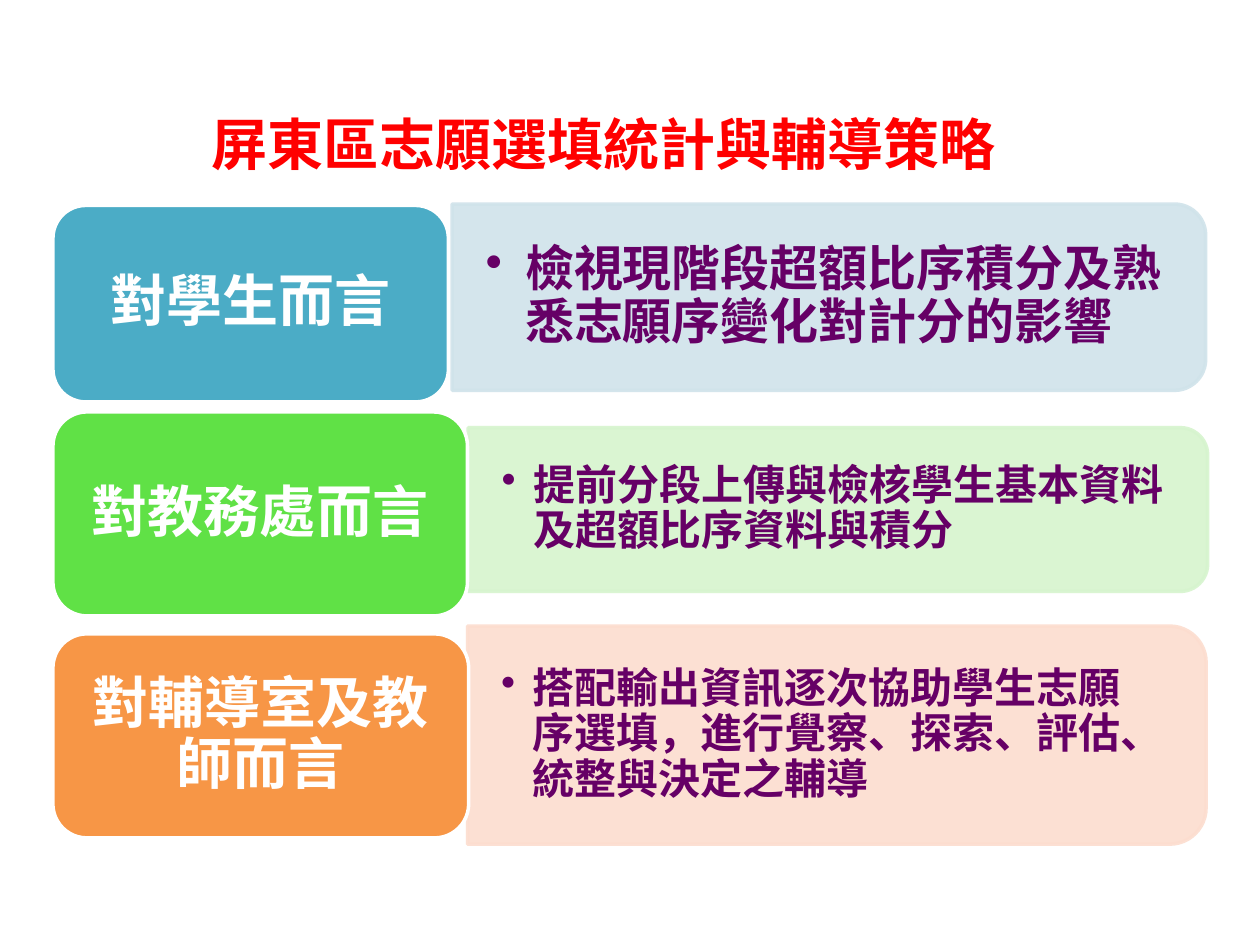
from dataclasses import dataclass

from lxml.etree import SubElement
from pptx import Presentation
from pptx.dml.color import RGBColor
from pptx.enum.shapes import MSO_SHAPE as Shape
from pptx.enum.text import MSO_ANCHOR as Anchor, PP_ALIGN as Align
from pptx.oxml.ns import qn
from pptx.util import Pt


@dataclass(frozen=True)
class Theme:
    font: str = "Noto Sans CJK SC"
    title: str = "FF0000"
    label: str = "FFFFFF"
    body: str = "660066"
    heading_size: int = 32
    line_width: int = 2
    line_spacing: float = 0.9
    panel_alpha: int = 90000


THEME = Theme()
TITLE = "屏東區志願選填統計與輔導策略"
TITLE_BOX = (113.8, 63.4, 517.7, 82.8)
CARD_LEFT = 30.24
CORNER_INSET = 0.0488
LABEL_MARGINS = (9.4, 5)
BODY_MARGINS = (19.2, 10)

# card and panel hold their own geometry because the rows differ slightly
ROWS = [
    dict(label="對學生而言", body="檢視現階段超額比序積分及熟悉志願序變化對計分的影響",
         size=28, indent=22.5, card_fill="4BACC6", panel_fill="D0E3EA",
         card=(117.4, 226, 112.3), panel=(258.4, 116.6, 430.56, 106.5)),
    dict(label="對教務處而言", body="提前分段上傳與檢核學生基本資料及超額比序資料與積分",
         size=24, indent=18, card_fill="60E146", panel_fill="D6F4CE",
         card=(235.4, 236.9, 116.6), panel=(267.5, 244.4, 422.6, 93.6)),
    dict(label="對輔導室及教師而言",
         body="搭配輸出資訊逐次協助學生志願序選填，進行覺察、探索、評估、統整與決定之輔導",
         size=24, indent=18, card_fill="F79646", panel_fill="FCDDCF",
         card=(362.2, 237.6, 116.6), panel=(267.2, 357.8, 422, 124.6)),
]


def write(shape, text, size, color, align=Align.LEFT, anchor=Anchor.MIDDLE,
          margins=(7.2, 3.6), indent=0):
    frame = shape.text_frame
    frame.word_wrap = True
    frame.vertical_anchor = anchor
    frame.margin_left = frame.margin_right = Pt(margins[0])
    frame.margin_top = frame.margin_bottom = Pt(margins[1])
    paragraph = frame.paragraphs[0]
    paragraph.text = text
    paragraph.alignment = align
    paragraph.line_spacing = THEME.line_spacing
    properties = paragraph._p.get_or_add_pPr()
    if indent:
        paragraph.level = 1
        properties.set("marL", str(Pt(indent)))
        properties.set("indent", str(-Pt(indent)))
        SubElement(properties, qn("a:buChar")).set("char", "•")
    font = paragraph.font
    font.size, font.bold, font.name = Pt(size), True, THEME.font
    font.color.rgb = RGBColor.from_string(color)
    east_asian = SubElement(properties.find(qn("a:defRPr")), qn("a:ea"))
    east_asian.set("typeface", THEME.font)


def add_block(slide, kind, box, fill, line):
    shape = slide.shapes.add_shape(kind, *map(Pt, box))
    shape.shadow.inherit = False
    shape.fill.solid()
    shape.fill.fore_color.rgb = RGBColor.from_string(fill)
    shape.line.color.rgb = RGBColor.from_string(line)
    shape.line.width = Pt(THEME.line_width)
    return shape


def add_panel(slide, row):
    left, top, width, height = row["panel"]
    shift = (width - height) / 2
    color = row["panel_fill"]
    panel = add_block(slide, Shape.ROUND_2_SAME_RECTANGLE,
                      (left + shift, top - shift, height, width), color, color)
    panel.rotation = 90
    for tint in panel._element.spPr.iter(qn("a:srgbClr")):
        SubElement(tint, qn("a:alpha")).set("val", str(THEME.panel_alpha))
    inset = height * CORNER_INSET
    box = (left, top + inset, width - inset, height - 2 * inset)
    write(slide.shapes.add_textbox(*map(Pt, box)), row["body"], row["size"],
          THEME.body, margins=BODY_MARGINS, indent=row["indent"])


def add_card(slide, row):
    card = add_block(slide, Shape.ROUNDED_RECTANGLE, (CARD_LEFT, *row["card"]),
                     row["card_fill"], THEME.label)
    write(card, row["label"], THEME.heading_size, THEME.label,
          align=Align.CENTER, margins=LABEL_MARGINS)


def main():
    """Build the guidance strategy slide."""
    presentation = Presentation()
    presentation.slide_width, presentation.slide_height = Pt(720), Pt(540)
    slide = presentation.slides.add_slide(presentation.slide_layouts[6])
    write(slide.shapes.add_textbox(*map(Pt, TITLE_BOX)), TITLE,
          THEME.heading_size, THEME.title, anchor=Anchor.TOP)
    for row in ROWS:
        add_panel(slide, row)
        add_card(slide, row)
    presentation.save("out.pptx")


if __name__ == "__main__":
    main()
